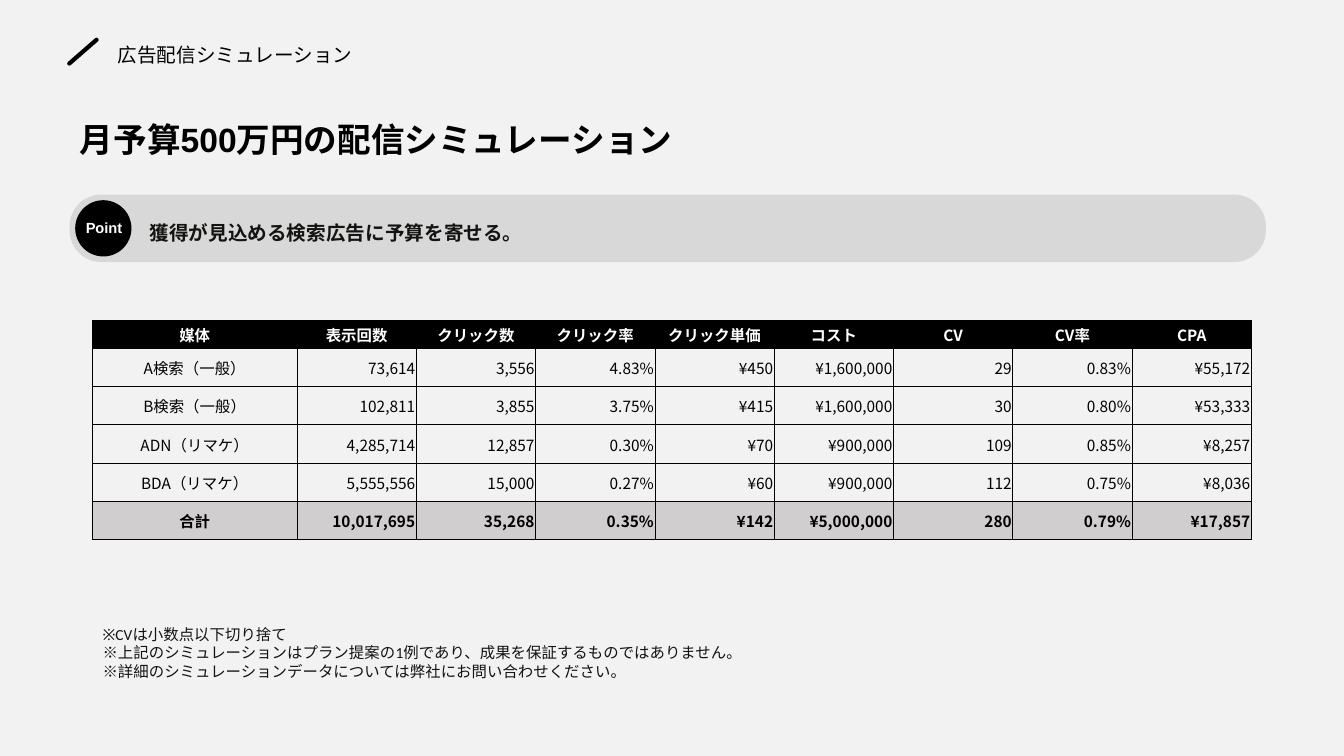
import dataclasses

import pptx
import pptx.dml.color
import pptx.enum.shapes
import pptx.enum.text
import pptx.oxml
import pptx.oxml.ns
import pptx.util

Pt = pptx.util.Pt
ALIGN = pptx.enum.text.PP_ALIGN
ANCHOR = pptx.enum.text.MSO_ANCHOR
SHAPE = pptx.enum.shapes.MSO_SHAPE


@dataclasses.dataclass(frozen=True)
class Theme:
    """Colours, fonts and type sizes of the slide."""
    back: str = "F2F2F2"
    black: str = "000000"
    ink: str = "131311"
    white: str = "FFFFFF"
    band: str = "D8D8D8"
    total: str = "D0CECE"
    head_font: str = "Arial"
    body_font: str = "Calibri"
    cjk_font: str = "Noto Sans CJK JP"
    title: float = 24
    lead: float = 14
    small: float = 11
    badge: float = 10.5


T = Theme()

ROWS = [
    ["媒体", "表示回数", "クリック数", "クリック率", "クリック単価", "コスト", "CV", "CV率", "CPA"],
    ["A検索（一般）", "73,614", "3,556", "4.83%", "¥450", "¥1,600,000", "29", "0.83%", "¥55,172"],
    ["B検索（一般）", "102,811", "3,855", "3.75%", "¥415", "¥1,600,000", "30", "0.80%", "¥53,333"],
    ["ADN（リマケ）", "4,285,714", "12,857", "0.30%", "¥70", "¥900,000", "109", "0.85%", "¥8,257"],
    ["BDA（リマケ）", "5,555,556", "15,000", "0.27%", "¥60", "¥900,000", "112", "0.75%", "¥8,036"],
    ["合計", "10,017,695", "35,268", "0.35%", "¥142", "¥5,000,000", "280", "0.79%", "¥17,857"],
]
NOTES = [
    "※CVは小数点以下切り捨て",
    "※上記のシミュレーションはプラン提案の1例であり、成果を保証するものではありません。\v"
    "※詳細のシミュレーションデータについては弊社にお問い合わせください。",
]


def rgb(color):
    """Turn a hex string into a colour."""
    return pptx.dml.color.RGBColor.from_string(color)


def add_xml(parent, xml):
    """Append a DrawingML element to a parent element."""
    parent.append(pptx.oxml.parse_xml(xml.replace(">", f" {pptx.oxml.ns.nsdecls('a')}>", 1)))


def style(p, size, font, color, bold=False):
    """Format every run of a paragraph."""
    for r in p.runs:
        r.font.size = Pt(size)
        r.font.bold = bold
        r.font.color.rgb = rgb(color)
        r.font.name = font
        add_xml(r.font._element, f'<a:ea typeface="{T.cjk_font}"></a:ea>')


def add_text(s, box, lines, size, font, color, bold=False, spacing=None, anchor=ANCHOR.TOP):
    """Place a text box with one paragraph for each line."""
    tf = s.shapes.add_textbox(*map(Pt, box)).text_frame
    tf.word_wrap = True
    tf.vertical_anchor = anchor
    tf.text = "\n".join(lines)
    for p in tf.paragraphs:
        p.line_spacing = spacing
        style(p, size, font, color, bold)


def add_solid(s, kind, box, color):
    """Place a filled shape without a line."""
    sp = s.shapes.add_shape(kind, *map(Pt, box))
    sp.shadow.inherit = False
    sp.fill.solid()
    sp.fill.fore_color.rgb = rgb(color)
    sp.line.fill.background()
    return sp


def add_header(s, box, section, title):
    """Draw the slash, the section name and the title."""
    x, y, w, h = box
    slash = s.shapes.add_connector(pptx.enum.shapes.MSO_CONNECTOR.STRAIGHT,
                                   Pt(x + 19), Pt(y + 1), Pt(x - 0.5), Pt(y + 18))
    slash.line.color.rgb = rgb(T.black)
    slash.line.width = Pt(3)
    slash.line._get_or_add_ln().set("cap", "rnd")
    add_xml(slash._element.spPr, "<a:effectLst></a:effectLst>")
    add_text(s, (x + 27, y, 230, 24.5), [section], T.lead, T.head_font, T.black)
    add_text(s, (x, y + 36, w, h - 36), [title], T.title, T.head_font, T.black,
             bold=True, spacing=1.5, anchor=ANCHOR.MIDDLE)


def add_point(s, box, label, message):
    """Draw the rounded band with its round badge and message."""
    x, y, w, h = box
    band = add_solid(s, SHAPE.ROUNDED_RECTANGLE, box, T.band)
    band.adjustments[0] = 0.47
    add_text(s, (x + 50, y + 7, w - 123, 32.4), [message], T.lead, T.body_font, T.ink,
             bold=True, spacing=1.5)
    d = h - 9
    badge = add_solid(s, SHAPE.OVAL, (x + 4.5, y + 4.5, d, d), T.black)
    badge.line.color.rgb = rgb(T.black)
    badge.line.width = Pt(1)
    add_text(s, (x + 4.5, y + 13.5, 44, 20), [label], T.badge, T.head_font, T.white, bold=True)


def format_cell(cell, align, color, bold, fill):
    """Give a cell its margins, borders, fill and type."""
    cell.margin_left = cell.margin_right = cell.margin_top = Pt(0.75)
    cell.margin_bottom = 0
    cell.vertical_anchor = ANCHOR.MIDDLE
    for side in "LRTB":
        add_xml(cell._tc.get_or_add_tcPr(),
                f'<a:ln{side} w="{Pt(0.5)}"><a:solidFill><a:srgbClr val="{T.black}"/>'
                f'</a:solidFill></a:ln{side}>')
    if fill:
        cell.fill.solid()
        cell.fill.fore_color.rgb = rgb(fill)
    else:
        cell.fill.background()
    p = cell.text_frame.paragraphs[0]
    p.alignment = align
    style(p, T.small, T.cjk_font, color, bold)


def add_simulation(s, box, rows):
    """Draw the simulation table with a header and a total row."""
    x, y, w, h = box
    media_w, head_h = 146.2, 20
    last, cols = len(rows) - 1, len(rows[0])
    table = s.shapes.add_table(len(rows), cols, *map(Pt, box)).table
    table.horz_banding = False
    for j, col in enumerate(table.columns):
        col.width = Pt(media_w if j == 0 else (w - media_w) / (cols - 1))
    for i, values in enumerate(rows):
        table.rows[i].height = Pt(head_h if i == 0 else (h - head_h) / last)
        fill = {0: T.black, last: T.total}.get(i)
        for j, value in enumerate(values):
            cell = table.cell(i, j)
            cell.text = value
            format_cell(cell, ALIGN.CENTER if 0 in (i, j) else ALIGN.RIGHT,
                        T.white if i == 0 else T.black, i in (0, last), fill)


def main():
    """Build the slide and save it."""
    prs = pptx.Presentation()
    prs.slide_width, prs.slide_height = Pt(960), Pt(540)
    s = prs.slides.add_slide(prs.slide_layouts[6])
    s.background.fill.solid()
    s.background.fill.fore_color.rgb = rgb(T.back)
    add_header(s, (50, 27.4, 534, 93.6), "広告配信シミュレーション", "月予算500万円の配信シミュレーション")
    add_point(s, (49.7, 139, 854.6, 48.2), "Point", "獲得が見込める検索広告に予算を寄せる。")
    add_simulation(s, (66, 228.8, 828, 156.5), ROWS)
    add_text(s, (66.2, 442.8, 615.6, 47.5), NOTES, T.small, T.body_font, T.ink)
    prs.save("out.pptx")


if __name__ == "__main__":
    main()
